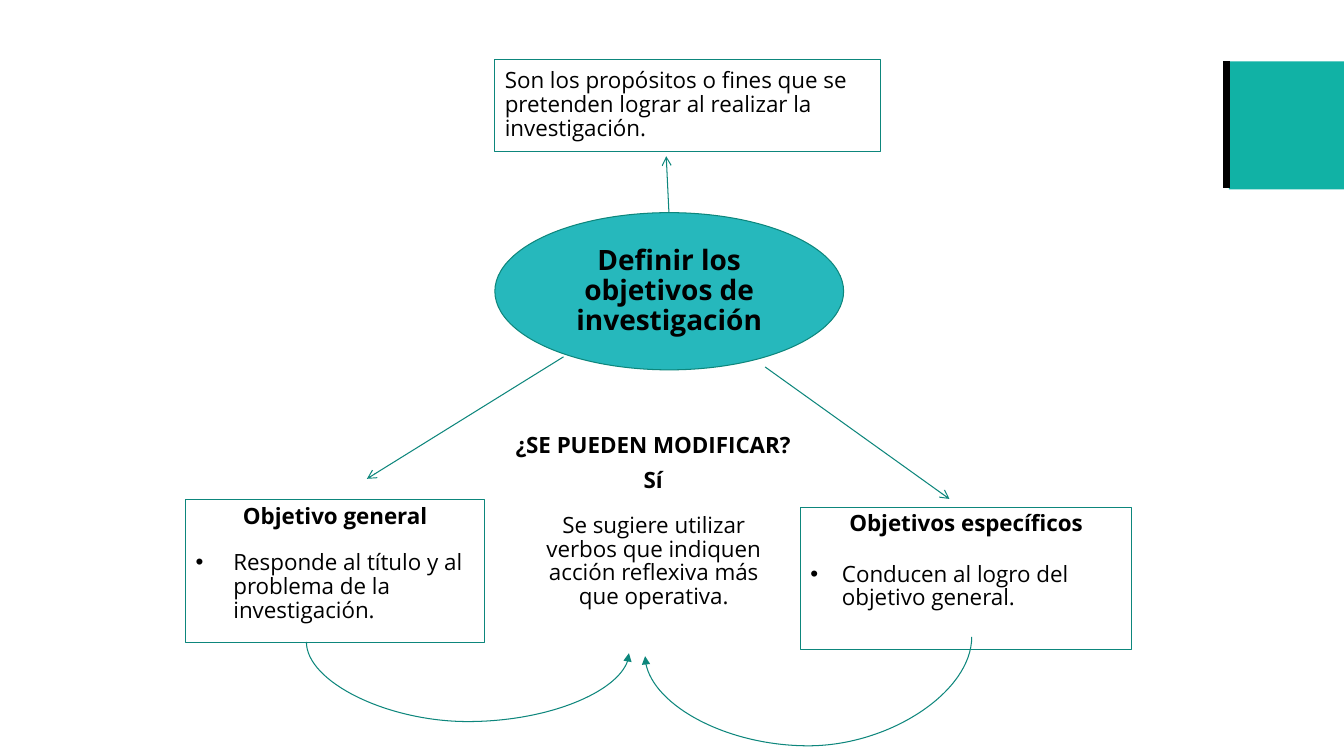
from dataclasses import dataclass

from lxml import etree
from pptx import Presentation
from pptx.dml.color import RGBColor
from pptx.enum.shapes import MSO_CONNECTOR, MSO_SHAPE
from pptx.enum.text import MSO_ANCHOR, MSO_AUTO_SIZE, PP_ALIGN
from pptx.oxml.ns import qn
from pptx.util import Pt

STRAIGHT, CURVE = MSO_CONNECTOR.STRAIGHT, MSO_CONNECTOR.CURVE
RECT, OVAL = MSO_SHAPE.RECTANGLE, MSO_SHAPE.OVAL
TOP, MIDDLE = MSO_ANCHOR.TOP, MSO_ANCHOR.MIDDLE
LEFT, CENTER = PP_ALIGN.LEFT, PP_ALIGN.CENTER


@dataclass(frozen=True)
class Theme:
    font: str = "Open Sans"
    title: float = 20
    body: float = 16
    spacing: float = 0.89
    outline: float = 0.75
    ink: str = "000000"
    edge: str = "0D867C"
    oval: str = "26B8BC"
    accent: str = "11B2A5"


def write(tf, text, theme, size=None, bold=False, align=LEFT, before=0, bullet=0):
    p = tf.add_paragraph() if tf.text else tf.paragraphs[0]
    pPr = p._p.get_or_add_pPr()
    pPr.set("marL", str(Pt(bullet)))
    pPr.set("indent", str(-Pt(bullet)))
    if bullet:
        etree.SubElement(pPr, qn("a:buFont")).set("typeface", "Arial")
        etree.SubElement(pPr, qn("a:buChar")).set("char", "•")
    else:
        etree.SubElement(pPr, qn("a:buNone"))
    p.alignment = align
    p.line_spacing = theme.spacing
    p.space_before = Pt(before)
    p.space_after = Pt(0)
    r = p.add_run()
    r.text = text
    r.font.name = theme.font
    r.font.size = Pt(size or theme.body)
    r.font.bold = bold
    r.font.color.rgb = RGBColor.from_string(theme.ink)


class Deck:
    def __init__(self, s, theme):
        self.s = s
        self.theme = theme

    def outline(self, sp, color=None, width=None):
        sp.line.color.rgb = RGBColor.from_string(color or self.theme.edge)
        sp.line.width = Pt(width or self.theme.outline)

    def frame(self, sp, anchor):
        tf = sp.text_frame
        tf.word_wrap = True
        tf.auto_size = MSO_AUTO_SIZE.NONE
        tf.vertical_anchor = anchor
        return tf

    def place(self, sp, x, y, w, h):
        sp.left, sp.top, sp.width, sp.height = Pt(x), Pt(y), Pt(w), Pt(h)

    def shape(self, kind, x, y, w, h, fill=None, edged=True):
        sp = self.s.shapes.add_shape(kind, Pt(x), Pt(y), Pt(w), Pt(h))
        sp.shadow.inherit = False
        if fill:
            sp.fill.solid()
            sp.fill.fore_color.rgb = RGBColor.from_string(fill)
        else:
            sp.fill.background()
        if edged:
            self.outline(sp)
        else:
            sp.line.fill.background()
        return sp

    def box(self, x, y, w, h, text):
        tf = self.frame(self.shape(RECT, x, y, w, h), MIDDLE)
        write(tf, text, self.theme)

    def title(self, text, x, y, w, h):
        sp = self.s.shapes.title
        self.place(sp, x, y, w, h)
        write(self.frame(sp, MIDDLE), text, self.theme,
              size=self.theme.title, bold=True, align=CENTER)
        sp.element.getparent().append(sp.element)

    def goal(self, idx, x, y, w, h, heading, item, gap, indent):
        sp = self.s.placeholders[idx]
        self.place(sp, x, y, w, h)
        self.outline(sp)
        tf = self.frame(sp, TOP)
        write(tf, heading, self.theme, bold=True, align=CENTER)
        write(tf, item, self.theme, before=gap, bullet=indent)

    def note(self, x, y, w, h, lines, bold=False):
        sp = self.s.shapes.add_textbox(Pt(x), Pt(y), Pt(w), Pt(h))
        tf = self.frame(sp, TOP)
        for i, text in enumerate(lines):
            write(tf, text, self.theme, bold=bold, align=CENTER, before=8 if i else 0)

    def line(self, x1, y1, x2, y2, kind=STRAIGHT, head=None, color=None, width=None):
        c = self.s.shapes.add_connector(kind, Pt(x1), Pt(y1), Pt(x2), Pt(y2))
        self.outline(c, color, width)
        if head:
            etree.SubElement(c.line._get_or_add_ln(), qn("a:tailEnd")).set("type", head)
        etree.SubElement(c._element.spPr, qn("a:effectLst"))
        return c

    def curve(self, x1, y1, x2, y2, bottom):
        w, h = y2 - y1, abs(x2 - x1)
        x, y = (x1 + x2 - w) / 2, (y1 + y2 - h) / 2
        c = self.line(x, y, x + w, y + h, kind=CURVE, head="triangle")
        spPr = c._element.spPr
        xfrm = spPr.find(qn("a:xfrm"))
        rightward = x2 > x1
        xfrm.set("rot", str((270 if rightward else 90) * 60000))
        if rightward:
            xfrm.set("flipH", "1")
        geom = spPr.find(qn("a:prstGeom"))
        av = geom.find(qn("a:avLst"))
        if av is None:
            av = etree.SubElement(geom, qn("a:avLst"))
        gd = etree.SubElement(av, qn("a:gd"))
        gd.set("name", "adj1")
        gd.set("fmla", f"val {round((bottom - y1) / w * 100000)}")


def main():
    prs = Presentation()
    prs.slide_width, prs.slide_height = Pt(960), Pt(540)
    theme = Theme()
    d = Deck(prs.slides.add_slide(prs.slide_layouts[3]), theme)

    d.shape(RECT, 877.7, 43.9, 82.3, 91.4, fill=theme.accent, edged=False)
    d.line(876.2, 43.9, 876.2, 134.6, color=theme.ink, width=5)

    d.box(353.5, 42.5, 275.8, 65.5,
          "Son los propósitos o fines que se pretenden lograr al realizar la investigación.")
    d.goal(1, 132.5, 357.1, 213.8, 101.5, "Objetivo general",
           "Responde al título y al problema de la investigación.", gap=16.3, indent=27)
    d.goal(2, 571.7, 362.2, 236.9, 101.5, "Objetivos específicos",
           "Conducen al logro del objetivo general.", gap=19.2, indent=22.5)

    for ends in ((402.5, 254.9, 262.1, 342), (546.5, 262.1, 678.2, 356.4),
                 (478.1, 157.7, 475.9, 111.6)):
        d.line(*ends, head="arrow")

    d.note(376.6, 363.6, 180.7, 85,
           ["Se sugiere utilizar verbos que indiquen acción reflexiva más que operativa."])
    d.note(346.3, 306.7, 240.5, 55.4, ["¿SE PUEDEN MODIFICAR?", "Sí"], bold=True)

    d.curve(218.9, 458.6, 449.3, 466.6, bottom=515.5)
    d.curve(694.1, 455, 460.8, 468.7, bottom=532.8)

    d.shape(OVAL, 353.5, 151.9, 249.1, 112.3, fill=theme.oval)
    d.title("Definir los objetivos de investigación", 390, 168.4, 176.1, 79.4)

    prs.save("out.pptx")


if __name__ == "__main__":
    main()
